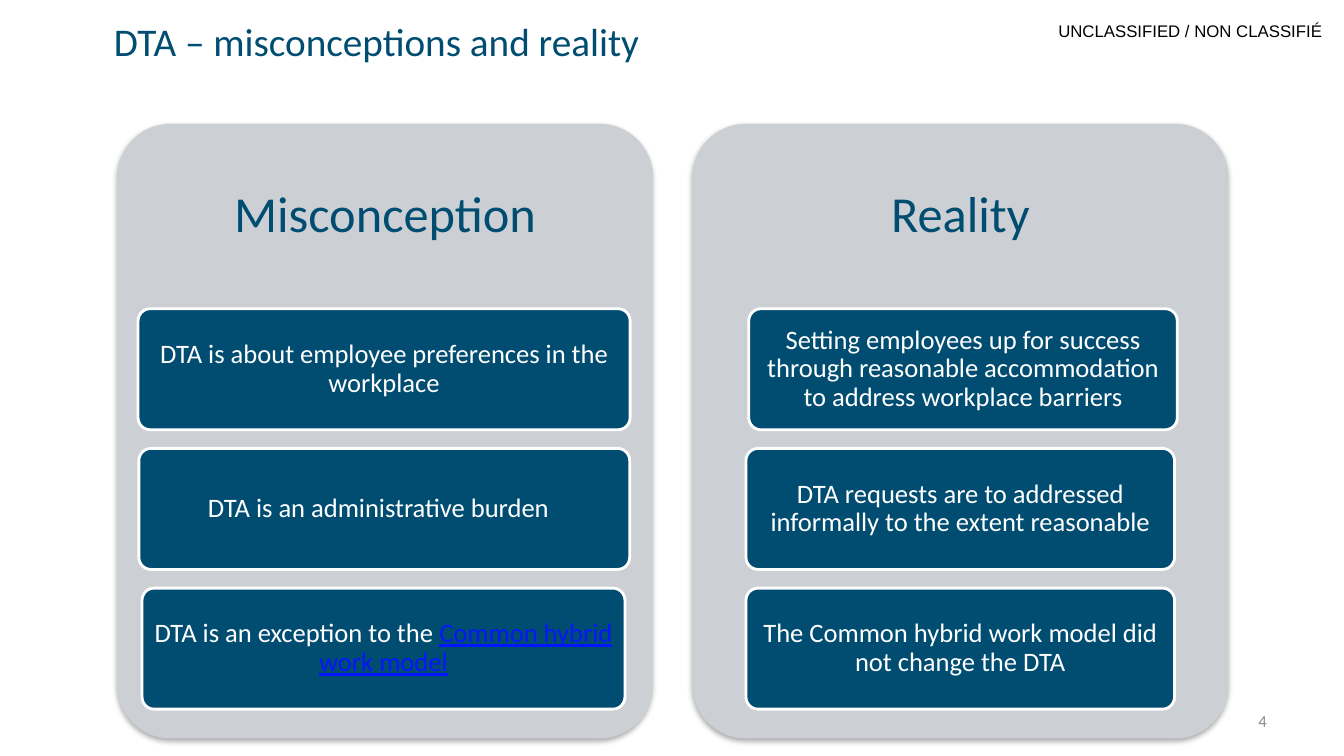
from dataclasses import dataclass

from lxml import etree
from pptx import Presentation
from pptx.dml.color import RGBColor
from pptx.enum.shapes import MSO_SHAPE
from pptx.enum.text import MSO_ANCHOR, MSO_AUTO_SIZE, PP_ALIGN
from pptx.oxml.ns import qn
from pptx.util import Cm, Pt

ROUNDED = MSO_SHAPE.ROUNDED_RECTANGLE
TOP, MIDDLE = MSO_ANCHOR.TOP, MSO_ANCHOR.MIDDLE
LEFT, CENTER, RIGHT = PP_ALIGN.LEFT, PP_ALIGN.CENTER, PP_ALIGN.RIGHT
TITLE_ONLY = 5


@dataclass(frozen=True)
class Theme:
    navy: str = "004D71"
    panel: str = "CCD0D5"
    white: str = "FFFFFF"
    black: str = "000000"
    grey: str = "8C8C8C"
    link: str = "0415FF"
    font: str = "Calibri"
    marking_font: str = "Arial"
    title_size: float = 28
    heading_size: float = 36
    card_size: float = 19
    small_size: float = 12


THEME = Theme()

PANEL_TOP, PANEL_WIDTH, PANEL_HEIGHT = 3.12, 13.51, 15.49
HEADING_HEIGHT = 4.65
CARD_TOP, CARD_HEIGHT, CARD_PITCH = 7.78, 3.05, 3.52

# Heading, panel left, then cards as (left, width, text, linked text)
COLUMNS = [
    ("Misconception", 2.95, [
        (3.48, 12.4, "DTA is about employee preferences in the workplace", ""),
        (3.5, 12.37, "DTA is an administrative burden\t", ""),
        (3.58, 12.17, "DTA is an exception to the ", "Common hybrid work model"),
    ]),
    ("Reality", 17.45, [
        (18.87, 10.8, "Setting employees up for success through reasonable "
                      "accommodation to address workplace barriers", ""),
        (18.8, 10.8, "DTA requests are to addressed informally to the extent reasonable", ""),
        (18.8, 10.8, "The Common hybrid work model did not change the DTA", ""),
    ]),
]


def set_frame(frame, anchor=TOP, inset_x=0.0, inset_y=0.0, wrap=True):
    frame.word_wrap = wrap
    frame.auto_size = MSO_AUTO_SIZE.NONE
    frame.vertical_anchor = anchor
    frame.margin_left = frame.margin_right = Cm(inset_x)
    frame.margin_top = frame.margin_bottom = Cm(inset_y)


def write(frame, text, size, color, font=THEME.font, align=LEFT, spacing=1.0, underline=None):
    """Append a formatted run to the frame's first paragraph."""
    paragraph = frame.paragraphs[0]
    paragraph.alignment = align
    paragraph.line_spacing = spacing
    run = paragraph.add_run()
    run.text = text
    run.font.name = font
    run.font.size = Pt(size)
    run.font.color.rgb = RGBColor.from_string(color)
    run.font.underline = underline


def add_text_box(slide, left, top, width, height, **frame_format):
    frame = slide.shapes.add_textbox(Cm(left), Cm(top), Cm(width), Cm(height)).text_frame
    set_frame(frame, **frame_format)
    return frame


def add_rounded(slide, left, top, width, height, fill):
    box = slide.shapes.add_shape(ROUNDED, Cm(left), Cm(top), Cm(width), Cm(height))
    box.adjustments[0] = 0.1
    box.shadow.inherit = False
    box.fill.solid()
    box.fill.fore_color.rgb = RGBColor.from_string(fill)
    box.line.fill.background()
    return box


def add_drop_shadow(shape):
    effects = shape._element.spPr.find(qn("a:effectLst"))
    shadow = etree.SubElement(effects, qn("a:outerShdw"), blurRad=str(Pt(3.5)),
                              dist=str(Pt(2.2)), dir="5400000", rotWithShape="0")
    color = etree.SubElement(shadow, qn("a:srgbClr"), val=THEME.black)
    etree.SubElement(color, qn("a:alpha"), val="32000")


def add_panel(slide, heading, left):
    panel = add_rounded(slide, left, PANEL_TOP, PANEL_WIDTH, PANEL_HEIGHT, THEME.panel)
    add_drop_shadow(panel)
    frame = add_text_box(slide, left, PANEL_TOP, PANEL_WIDTH, HEADING_HEIGHT,
                         anchor=MIDDLE, inset_x=0.38, inset_y=0.38)
    write(frame, heading, THEME.heading_size, THEME.navy, align=CENTER, spacing=0.9)


def add_card(slide, left, top, width, text, linked):
    card = add_rounded(slide, left, top, width, CARD_HEIGHT, THEME.navy)
    card.line.color.rgb = RGBColor.from_string(THEME.white)
    card.line.width = Pt(2)
    frame = card.text_frame
    set_frame(frame, anchor=MIDDLE, inset_x=0.13, inset_y=0.1)
    write(frame, text, THEME.card_size, THEME.white, align=CENTER, spacing=0.9)
    if linked:
        write(frame, linked, THEME.card_size, THEME.link, align=CENTER,
              spacing=0.9, underline=True)


def set_title(slide, text):
    title = slide.shapes.title
    title.left, title.top, title.width, title.height = Cm(2.87), Cm(0.43), Cm(20.12), Cm(2.44)
    set_frame(title.text_frame)
    write(title.text_frame, text, THEME.title_size, THEME.navy)


def main():
    prs = Presentation()
    prs.slide_width, prs.slide_height = Cm(33.87), Cm(19.05)
    slide = prs.slides.add_slide(prs.slide_layouts[TITLE_ONLY])
    set_title(slide, "DTA – misconceptions and reality")

    marking = add_text_box(slide, 26.67, 0.53, 6.78, 0.51, wrap=False)
    write(marking, "UNCLASSIFIED / NON CLASSIFIÉ", THEME.small_size, THEME.black,
          font=THEME.marking_font)
    page_number = add_text_box(slide, 24.28, 17.65, 7.9, 1.02, anchor=MIDDLE,
                               inset_x=0.25, inset_y=0.13)
    write(page_number, "4", THEME.small_size, THEME.grey, align=RIGHT)

    for heading, panel_left, cards in COLUMNS:
        add_panel(slide, heading, panel_left)
        for row, (left, width, text, linked) in enumerate(cards):
            add_card(slide, left, CARD_TOP + row * CARD_PITCH, width, text, linked)

    prs.save("out.pptx")


if __name__ == "__main__":
    main()
